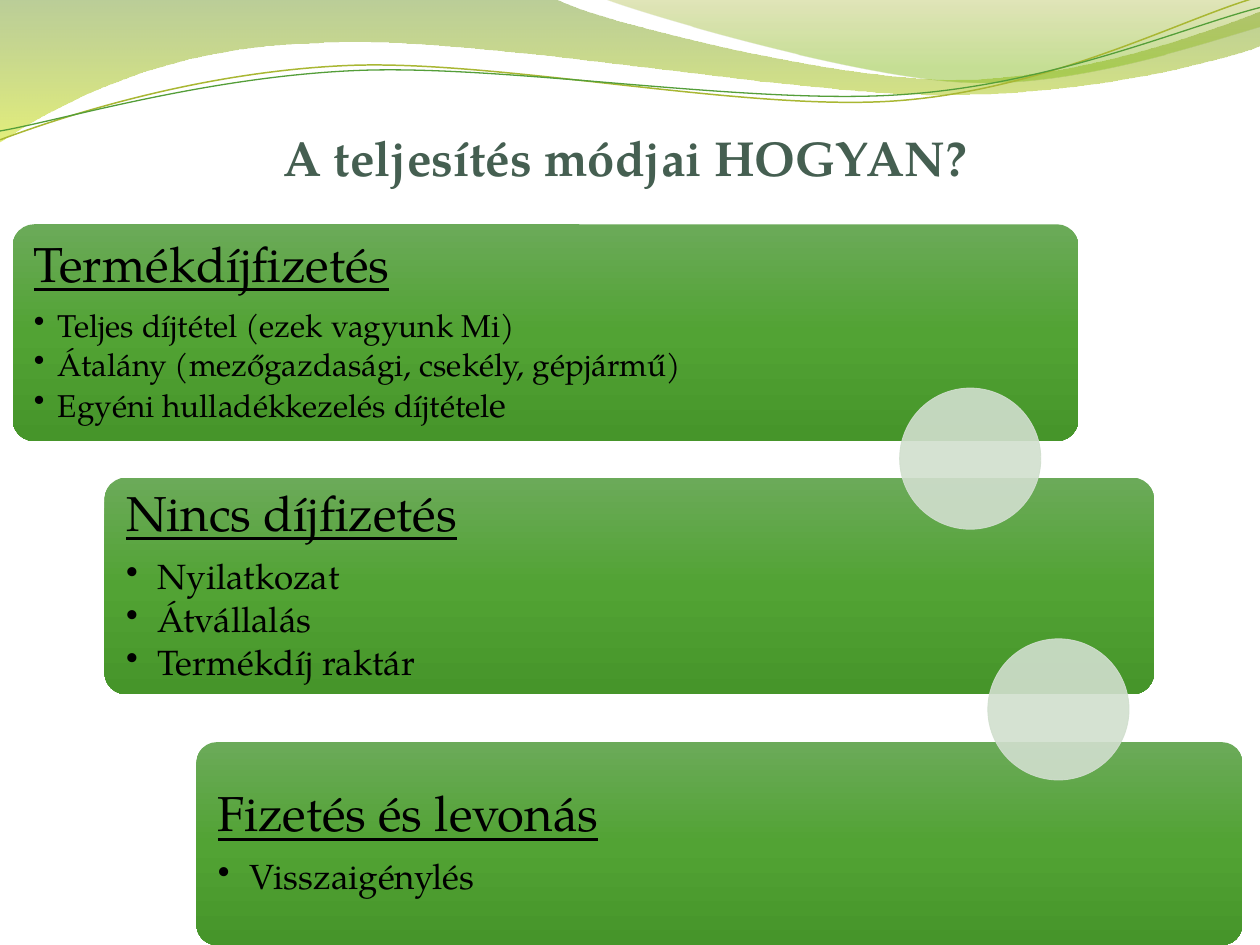
from math import cos, radians, sin

from lxml.etree import SubElement
from pptx import Presentation
from pptx.dml.color import RGBColor
from pptx.enum.shapes import MSO_SHAPE as Preset
from pptx.enum.text import MSO_ANCHOR as Anchor, MSO_AUTO_SIZE as AutoSize, PP_ALIGN as Align
from pptx.oxml.ns import qn
from pptx.util import Inches, Pt

FONT = "TeX Gyre Pagella"
BLACK = RGBColor(0x00, 0x00, 0x00)
TITLE_GREEN = RGBColor(0x45, 0x5F, 0x51)
LEAF = RGBColor(0x54, 0x9E, 0x39)
OLIVE = RGBColor(0xA9, 0xB7, 0x33)
PALE = RGBColor(0xD1, 0xDF, 0xCE)
PANEL_STOPS = [
    (0, RGBColor(0x6B, 0xAA, 0x59), 100),
    (50, RGBColor(0x52, 0xA3, 0x34), 100),
    (100, RGBColor(0x46, 0x95, 0x2A), 100),
]
WAVE_STOPS = [(0, RGBColor(0x69, 0x92, 0x1C), 45), (100, RGBColor(0xCC, 0xE1, 0x0F), 55)]
CREST_STOPS = [(0, RGBColor(0x9B, 0xAA, 0x1A), 30), (80, RGBColor(0x81, 0xBA, 0x16), 45)]

TITLE = "A teljesítés módjai HOGYAN?"
PANELS = [
    dict(heading="Termékdíjfizetés", top=1.78, width=8.46, height=1.72, text_width=6.47, indent=0.19,
         items=[[("Teljes díjtétel (ezek vagyunk Mi)", 18)],
                [("Átalány (mezőgazdasági, csekély, gépjármű)", 18)],
                [("Egyéni hulladékkezelés díjtétel", 18), ("e", 20)]]),
    dict(heading="Nincs díjfizetés", top=3.79, width=8.33, height=1.72, text_width=6.31, indent=0.25,
         items=[[("Nyilatkozat", 20)], [("Átvállalás", 20)], [("Termékdíj raktár", 20)]]),
    dict(heading="Fizetés és levonás", top=5.89, width=8.3, height=1.61, text_width=6.3, indent=0.25,
         items=[[("Visszaigénylés", 20)]]),
]
PANEL_LEFT, PANEL_STEP = 0.1, 0.73
TEXT_OFFSET, TEXT_INSET = 0.05, 0.12
DOT_LEFT, DOT_TOP, DOT_SIZE = 7.14, 3.08, 1.12
DOT_STEP_X, DOT_STEP_Y = 0.7, 1.99

FILLED_WAVES = [
    (WAVE_STOPS, [
        (0, 0), (4.4, -0.01),
        (4.75, 0.17, 6.63, 0.63, 7.58, 0.63), (8.53, 0.63, 9.58, 0.26, 10, 0.09), (10.01, 0.36),
        (9.83, 0.44, 8.69, 0.76, 7.46, 0.75), (6.22, 0.75, 3.81, 0.28, 2.57, 0.34),
        (1.29, 0.36, 0.46, 0.83, -0.01, 1.13)]),
    (CREST_STOPS, [
        (4.79, -0.01), (5.09, 0.11, 6.82, 0.62, 7.68, 0.65),
        (8.55, 0.69, 9.61, 0.32, 10, 0.21), (10, 0)]),
]
WAVE_LINES = [
    (OLIVE, 0.85, (4.99, 0.58), [
        (0, 1.11), (0.48, 0.93, 1.57, 0.57, 2.76, 0.52),
        (3.95, 0.47, 5.92, 0.89, 7.12, 0.8), (8.33, 0.71, 9.38, 0.15, 9.97, -0.02)]),
    (LEAF, 0.75, (5, 0.59), [
        (0, 1.04), (0.47, 0.96, 1.63, 0.61, 2.83, 0.56),
        (4.02, 0.51, 5.97, 0.84, 7.17, 0.75), (8.36, 0.67, 9.41, 0.21, 10, 0.06)]),
]
LINE_TILT = 2.7


def add_wave(shapes, segments, close, center=(0, 0), tilt=0):
    """Add an outline of straight and cubic segments, tilted back about its center."""
    turn_cos, turn_sin = cos(radians(tilt)), sin(radians(tilt))

    def place(x, y):
        """Give the point as it lies before the tilt."""
        dx, dy = x - center[0], y - center[1]
        return (Inches(center[0] + dx * turn_cos - dy * turn_sin),
                Inches(center[1] + dx * turn_sin + dy * turn_cos))

    start, *rest = [[place(*seg[i:i + 2]) for i in range(0, len(seg), 2)] for seg in segments]
    builder = shapes.build_freeform(*start[0])
    builder.add_line_segments([points[-1] for points in rest], close=close)
    wave = builder.convert_to_shape()
    outline = wave._element.spPr.find(".//" + qn("a:path"))
    for straight, points in zip(outline.findall(qn("a:lnTo")), rest):
        if len(points) == 3:
            curve = SubElement(outline, qn("a:cubicBezTo"))
            for x, y in points:
                SubElement(curve, qn("a:pt"), x=str(x - wave.left), y=str(y - wave.top))
            outline.replace(straight, curve)
    wave.rotation = -tilt
    wave.shadow.inherit = False
    return wave


def add_preset(shapes, preset, *box):
    """Add a preset shape without a shadow."""
    shape = shapes.add_shape(preset, *map(Inches, box))
    shape.shadow.inherit = False
    return shape


def set_alpha(color_element, percent):
    """Set the opacity of a colour element."""
    if percent < 100:
        SubElement(color_element, qn("a:alpha"), val=str(percent * 1000))


def fill_gradient(shape, stops):
    """Fill a shape from top to bottom and remove its line."""
    shape.fill.gradient()
    shape.fill.gradient_angle = 270
    stop_list = shape._element.spPr.find(".//" + qn("a:gsLst"))
    for old_stop in list(stop_list):
        stop_list.remove(old_stop)
    for position, color, opacity in stops:
        stop = SubElement(stop_list, qn("a:gs"), pos=str(position * 1000))
        set_alpha(SubElement(stop, qn("a:srgbClr"), val=str(color)), opacity)
    shape.line.fill.background()


def add_run(paragraph, text, size, color=BLACK, **style):
    """Add one formatted run."""
    run = paragraph.add_run()
    run.text = text
    run.font.name, run.font.size = FONT, Pt(size)
    run.font.color.rgb = color
    for key, value in style.items():
        setattr(run.font, key, value)


def set_spacing(paragraph, after):
    """Set tight lines and the space after, in percent."""
    paragraph.line_spacing = 0.9
    space = SubElement(paragraph._p.get_or_add_pPr(), qn("a:spcAft"))
    SubElement(space, qn("a:spcPct"), val=str(after * 1000))


def add_panel(shapes, row, panel):
    """Add a rounded panel with its heading and bullets."""
    left, top, height = PANEL_LEFT + row * PANEL_STEP, panel["top"], panel["height"]
    card = add_preset(shapes, Preset.ROUNDED_RECTANGLE, left, top, panel["width"], height)
    card.adjustments[0] = 0.1
    fill_gradient(card, PANEL_STOPS)

    box = (left + TEXT_OFFSET, top + TEXT_OFFSET, panel["text_width"], height - 2 * TEXT_OFFSET)
    frame = shapes.add_textbox(*map(Inches, box)).text_frame
    frame.word_wrap, frame.vertical_anchor = True, Anchor.MIDDLE
    frame.margin_left = frame.margin_right = frame.margin_top = frame.margin_bottom = Inches(TEXT_INSET)
    heading = frame.paragraphs[0]
    set_spacing(heading, 35)
    add_run(heading, panel["heading"], 28, underline=True)
    for item in panel["items"]:
        bullet = frame.add_paragraph()
        bullet.level = 1
        set_spacing(bullet, 15)
        properties = bullet._p.get_or_add_pPr()
        properties.set("marL", str(Inches(panel["indent"])))
        properties.set("indent", str(-Inches(panel["indent"])))
        SubElement(properties, qn("a:buChar"), char="••")
        for text, size in item:
            add_run(bullet, text, size)


def add_dot(shapes, row):
    """Add a translucent circle linking two panels."""
    dot = add_preset(shapes, Preset.OVAL, DOT_LEFT + row * DOT_STEP_X, DOT_TOP + row * DOT_STEP_Y,
                     DOT_SIZE, DOT_SIZE)
    dot.line.width = Pt(0.5)
    for fill in (dot.fill, dot.line.fill):
        fill.solid()
        fill.fore_color.rgb = PALE
    for color_element in dot._element.spPr.iter(qn("a:srgbClr")):
        set_alpha(color_element, 90)


def set_title(title):
    """Place and format the slide title."""
    title.left, title.top, title.width, title.height = map(Inches, (2.15, 0.96, 7.98, 0.94))
    frame = title.text_frame
    frame.word_wrap, frame.auto_size, frame.vertical_anchor = True, AutoSize.NONE, Anchor.TOP
    frame.paragraphs[0].alignment = Align.LEFT
    add_run(frame.paragraphs[0], TITLE, 28, TITLE_GREEN, bold=True)


def main():
    """Build the slide and save it."""
    deck = Presentation()
    deck.slide_width, deck.slide_height = Inches(10), Inches(7.5)
    slide = deck.slides.add_slide(deck.slide_layouts[5])
    shapes = slide.shapes
    for stops, segments in FILLED_WAVES:
        fill_gradient(add_wave(shapes, segments, True), stops)
    for color, width, center, segments in WAVE_LINES:
        wave = add_wave(shapes, segments, False, center, LINE_TILT)
        wave.fill.background()
        wave.line.color.rgb, wave.line.width = color, Pt(width)
    set_title(shapes.title)
    for row, panel in enumerate(PANELS):
        add_panel(shapes, row, panel)
    for row in range(len(PANELS) - 1):
        add_dot(shapes, row)
    deck.save("out.pptx")


if __name__ == "__main__":
    main()
